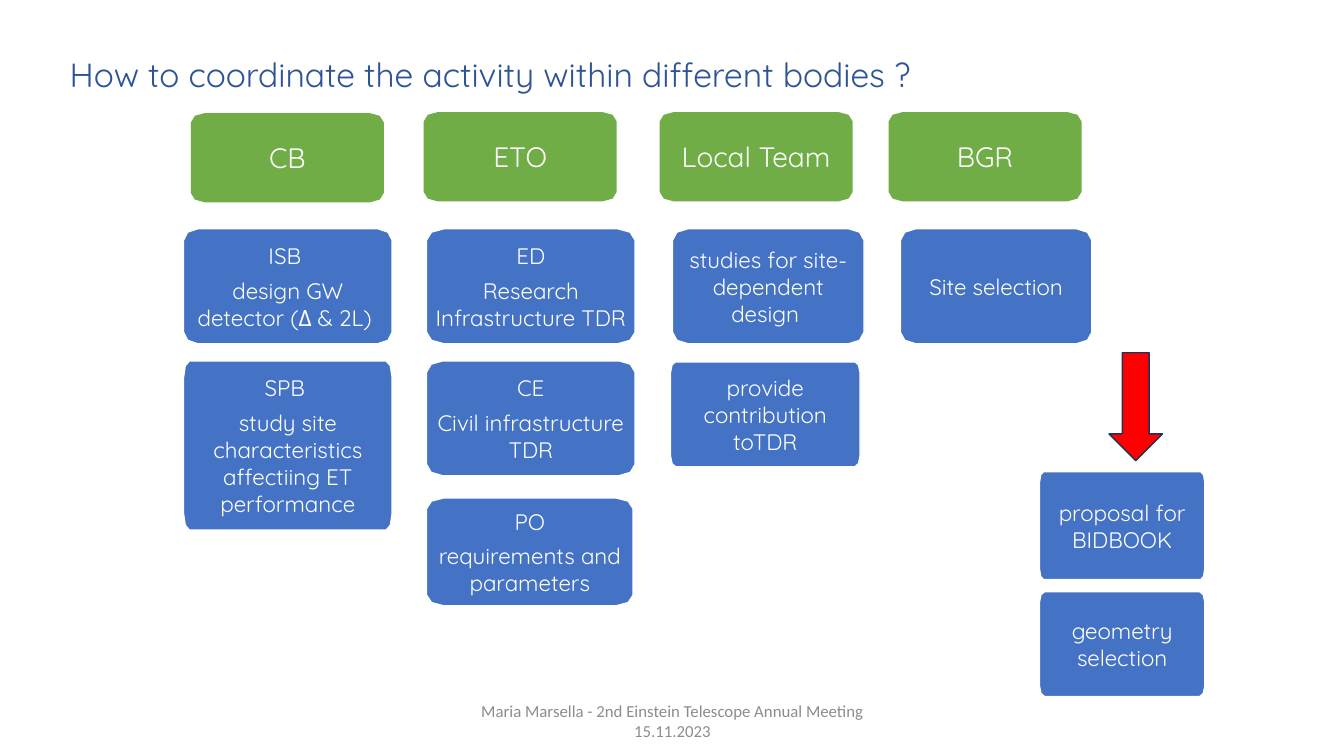
from math import cos, pi, sin

from pptx import Presentation
from pptx.dml.color import RGBColor
from pptx.enum.shapes import MSO_SHAPE
from pptx.enum.text import MSO_ANCHOR, MSO_AUTO_SIZE, PP_ALIGN
from pptx.util import Inches, Pt

GREEN = RGBColor(0x70, 0xAD, 0x47)
BLUE = RGBColor(0x44, 0x72, 0xC4)
WHITE = RGBColor(0xFF, 0xFF, 0xFF)
RED = RGBColor(0xFF, 0x00, 0x00)
NAVY = RGBColor(0x1E, 0x32, 0x56)
TITLE_BLUE = RGBColor(0x2F, 0x54, 0x96)
GREY = RGBColor(0x8C, 0x8C, 0x8C)
HEADING_FONT = "Quicksand"
CORNER_STEPS = 2


def format_text(frame, size, font, color):
    for paragraph in frame.paragraphs:
        for run in paragraph.runs:
            run.font.size = Pt(size)
            run.font.name = font
            run.font.color.rgb = color


def add_box(text, left, top, width, height, radius, fill, line, size, inset):
    radius_y = height * 0.1
    corners = [
        (left + width - radius, top + radius_y, -pi / 2),
        (left + width - radius, top + height - radius_y, 0),
        (left + radius, top + height - radius_y, pi / 2),
        (left + radius, top + radius_y, pi),
    ]
    outline = []
    for center_x, center_y, start in corners:
        for step in range(CORNER_STEPS + 1):
            angle = start + step * pi / 2 / CORNER_STEPS
            outline.append((Inches(center_x + radius * cos(angle)),
                            Inches(center_y + radius_y * sin(angle))))
    builder = slide.shapes.build_freeform(*outline[0])
    builder.add_line_segments(outline[1:], close=True)
    box = builder.convert_to_shape()
    box.shadow.inherit = False
    box.fill.solid()
    box.fill.fore_color.rgb = fill
    box.line.color.rgb = line
    box.line.width = Pt(1)
    frame = box.text_frame
    frame.word_wrap = True
    frame.vertical_anchor = MSO_ANCHOR.MIDDLE
    frame.margin_left = frame.margin_right = Inches(inset)
    frame.margin_top = frame.margin_bottom = Inches(inset)
    frame.text = text
    for paragraph in frame.paragraphs:
        paragraph.alignment = PP_ALIGN.CENTER
        paragraph.space_after = Pt(size * 0.35)
    format_text(frame, size, HEADING_FONT, WHITE)


presentation = Presentation()
presentation.slide_width = Inches(13.33)
presentation.slide_height = Inches(7.5)
slide = presentation.slides.add_slide(presentation.slide_layouts[5])

title = slide.shapes.title
title.left, title.top = Inches(0.59), Inches(0.25)
title.width, title.height = Inches(11.5), Inches(1.02)
title_frame = title.text_frame
title_frame.text = "How to coordinate the activity within different bodies ?"
title_frame.word_wrap = True
title_frame.auto_size = MSO_AUTO_SIZE.NONE
title_frame.vertical_anchor = MSO_ANCHOR.MIDDLE
title_frame.paragraphs[0].alignment = PP_ALIGN.LEFT
title_frame.paragraphs[0].line_spacing = 0.9
format_text(title_frame, 24, HEADING_FONT, TITLE_BLUE)

bodies = [
    ("CB", 1.9, 1.13),
    ("ETO", 4.21, 1.12),
    ("Local Team", 6.55, 1.12),
    ("BGR", 8.82, 1.12),
]
for body, left, top in bodies:
    add_box(body, left, top, 1.9, 0.87, 0.13, GREEN, GREEN, 20, 0.05)

tasks = [
    ("ISB \ndesign GW detector (Δ & 2L) ", 1.82, 2.27, 2.07, 1.14, 0.14, 0.05),
    ("SPB \nstudy site characteristics affectiing ET performance",
     1.82, 3.58, 2.07, 1.68, 0.06, 0.06),
    ("ED\nResearch Infrastructure TDR", 4.23, 2.27, 2.07, 1.14, 0.17, 0.06),
    ("CE\nCivil infrastructure TDR", 4.23, 3.58, 2.07, 1.14, 0.16, 0.06),
    ("PO\nrequirements and parameters", 4.23, 4.94, 2.05, 1.07, 0.17, 0.06),
    ("studies for site-dependent design ", 6.67, 2.27, 1.9, 1.14, 0.15, 0.06),
    ("provide contribution toTDR", 6.65, 3.59, 1.88, 1.04, 0.05, 0.05),
    ("Site selection", 8.93, 2.27, 1.9, 1.14, 0.15, 0.06),
    ("proposal for BIDBOOK", 10.31, 4.68, 1.64, 1.07, 0.04, 0.06),
    ("geometry selection", 10.31, 5.87, 1.64, 1.04, 0.05, 0.05),
]
for task, left, top, width, height, radius, inset in tasks:
    add_box(task, left, top, width, height, radius, BLUE, WHITE, 16, inset)

arrow = slide.shapes.add_shape(
    MSO_SHAPE.DOWN_ARROW, Inches(11), Inches(3.5), Inches(0.53), Inches(1.07))
arrow.shadow.inherit = False
arrow.fill.solid()
arrow.fill.fore_color.rgb = RED
arrow.line.color.rgb = NAVY
arrow.line.width = Pt(1)

footer = slide.shapes.add_textbox(Inches(4.42), Inches(6.95), Inches(4.5), Inches(0.4))
footer_frame = footer.text_frame
footer_frame.word_wrap = True
footer_frame.vertical_anchor = MSO_ANCHOR.MIDDLE
footer_frame.text = "Maria Marsella - 2nd Einstein Telescope Annual Meeting 15.11.2023"
footer_frame.paragraphs[0].alignment = PP_ALIGN.CENTER
format_text(footer_frame, 12, "Calibri", GREY)

presentation.save("out.pptx")
